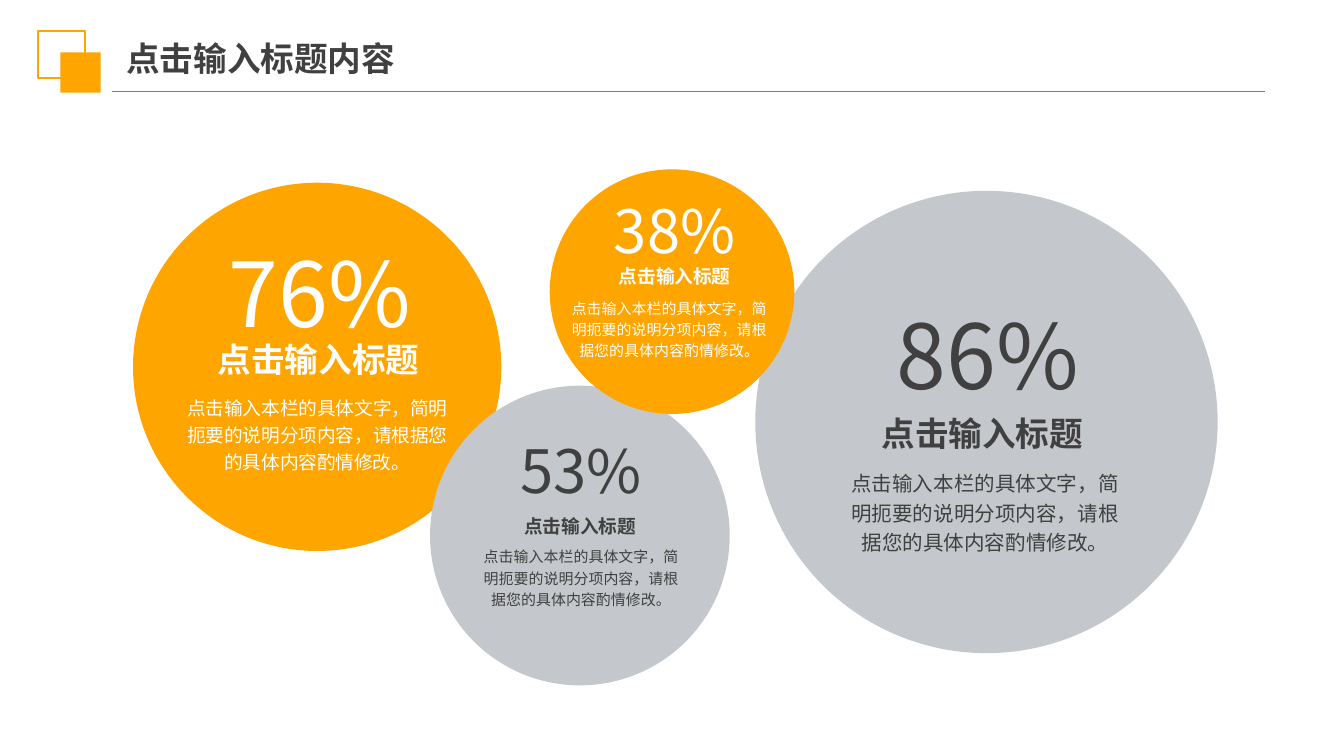
from dataclasses import dataclass

from lxml.etree import SubElement
from pptx import Presentation
from pptx.dml.color import RGBColor
from pptx.enum.shapes import MSO_CONNECTOR, MSO_SHAPE
from pptx.enum.text import MSO_ANCHOR, MSO_AUTO_SIZE, PP_ALIGN
from pptx.oxml.ns import qn
from pptx.util import Inches, Pt

FONT = "Noto Sans CJK SC"
ORANGE = RGBColor(0xFF, 0xA5, 0x00)
SILVER = RGBColor(0xC4, 0xC7, 0xCB)
GRAY = RGBColor(0x80, 0x80, 0x80)
DARK = RGBColor(0x40, 0x40, 0x40)
WHITE = RGBColor(0xFF, 0xFF, 0xFF)

TITLE = "点击输入标题内容"
HEADING = "点击输入标题"
BODY = "点击输入本栏的具体文字，简明扼要的说明分项内容，请根据您的具体内容酌情修改。"


@dataclass
class Bubble:
    """One percentage circle; tops and shifts are relative to the circle."""
    percent: str
    left: float
    top: float
    diameter: float
    fill: RGBColor
    color: RGBColor
    sizes: tuple
    tops: tuple
    body_width: float
    shifts: tuple = (0, 0, 0)


BUBBLES = [
    Bubble("86%", 5.62, 1.42, 3.44, SILVER, DARK, (48, 18, 11), (0.81, 1.65, 2.05), 2.12, (0.01, -0.03, -0.01)),
    Bubble("76%", 0.99, 1.36, 2.74, ORANGE, WHITE, (48, 18, 10), (0.41, 1.16, 1.56), 1.97, (0.02, 0.01, 0)),
    Bubble("53%", 3.2, 2.87, 2.23, SILVER, DARK, (32, 10, 8), (0.36, 0.96, 1.18), 1.53, (0.01, 0, 0.01)),
    Bubble("38%", 4.09, 1.26, 1.82, ORANGE, WHITE, (32, 10, 8), (0.18, 0.71, 0.94), 1.48, (0.02, 0.02, -0.02)),
]


def write_text(frame, text, *, size, color, bold=False, align=PP_ALIGN.CENTER,
               spacing=None, wrap=True, grow=True, padding=0):
    """Fill a text frame with one formatted paragraph."""
    frame.margin_left = frame.margin_right = 0
    frame.margin_top = frame.margin_bottom = Inches(padding)
    frame.word_wrap = wrap
    frame.auto_size = MSO_AUTO_SIZE.SHAPE_TO_FIT_TEXT if grow else MSO_AUTO_SIZE.NONE
    paragraph = frame.paragraphs[0]
    paragraph.alignment = align
    if spacing:
        paragraph.line_spacing = spacing
    run = paragraph.add_run()
    run.text = text
    run.font.size = Pt(size)
    run.font.bold = bold
    run.font.color.rgb = color
    run.font.name = FONT
    SubElement(run.font._element, qn("a:ea"), typeface=FONT)


def add_figure(shapes, kind, left, top, size, fill=None, line=None):
    """Add a square-bounded preset shape with a plain fill or outline."""
    shape = shapes.add_shape(kind, Inches(left), Inches(top), Inches(size), Inches(size))
    shape.shadow.inherit = False
    if fill is None:
        shape.fill.background()
    else:
        shape.fill.solid()
        shape.fill.fore_color.rgb = fill
    if line is None:
        shape.line.fill.background()
    else:
        shape.line.color.rgb = line
        shape.line.width = Pt(1)


def add_header(slide, left, top, width):
    """Place the square emblem, the title and the rule beneath them."""
    rule_top = Inches(top + 0.45)
    rule = slide.shapes.add_connector(
        MSO_CONNECTOR.STRAIGHT, Inches(left + 0.55), rule_top, Inches(left + width), rule_top)
    rule.line.color.rgb = GRAY
    rule.line.width = Pt(0.75)
    SubElement(rule._element.spPr, qn("a:effectLst"))

    emblem = slide.shapes.add_group_shape()
    add_figure(emblem.shapes, MSO_SHAPE.RECTANGLE, left, top, 0.35, line=ORANGE)
    add_figure(emblem.shapes, MSO_SHAPE.RECTANGLE, left + 0.17, top + 0.16, 0.3, fill=ORANGE)

    title = slide.shapes.title
    title.left, title.top = Inches(left + 0.66), Inches(top - 0.01)
    title.width, title.height = Inches(2.33), Inches(0.42)
    title.text_frame.vertical_anchor = MSO_ANCHOR.MIDDLE
    write_text(title.text_frame, TITLE, size=18, color=DARK, bold=True,
               align=PP_ALIGN.LEFT, grow=False, padding=0.05)


def add_bubble(slide, bubble):
    """Place a circle with its percentage, heading and description."""
    shapes = slide.shapes.add_group_shape().shapes
    add_figure(shapes, MSO_SHAPE.OVAL, bubble.left, bubble.top, bubble.diameter, fill=bubble.fill)
    center = bubble.left + bubble.diameter / 2
    percent_size, heading_size, body_size = bubble.sizes
    parts = [
        (bubble.percent, percent_size * 0.029, percent_size / 60, {"wrap": False}),
        (HEADING, heading_size / 12, heading_size / 60, {"wrap": False, "bold": True}),
        (BODY, bubble.body_width, body_size * 0.06, {"spacing": 1.2}),
    ]
    for part, size, top, shift in zip(parts, bubble.sizes, bubble.tops, bubble.shifts):
        text, width, height, style = part
        box = shapes.add_textbox(Inches(center + shift - width / 2), Inches(bubble.top + top),
                                 Inches(width), Inches(height))
        write_text(box.text_frame, text, size=size, color=bubble.color, **style)


def main():
    """Build and save the slide."""
    presentation = Presentation()
    presentation.slide_width = Inches(10)
    presentation.slide_height = Inches(10) * 9 // 16
    slide = presentation.slides.add_slide(presentation.slide_layouts[5])
    add_header(slide, 0.28, 0.23, 9.13)
    for bubble in BUBBLES:
        add_bubble(slide, bubble)
    presentation.save("out.pptx")


if __name__ == "__main__":
    main()
